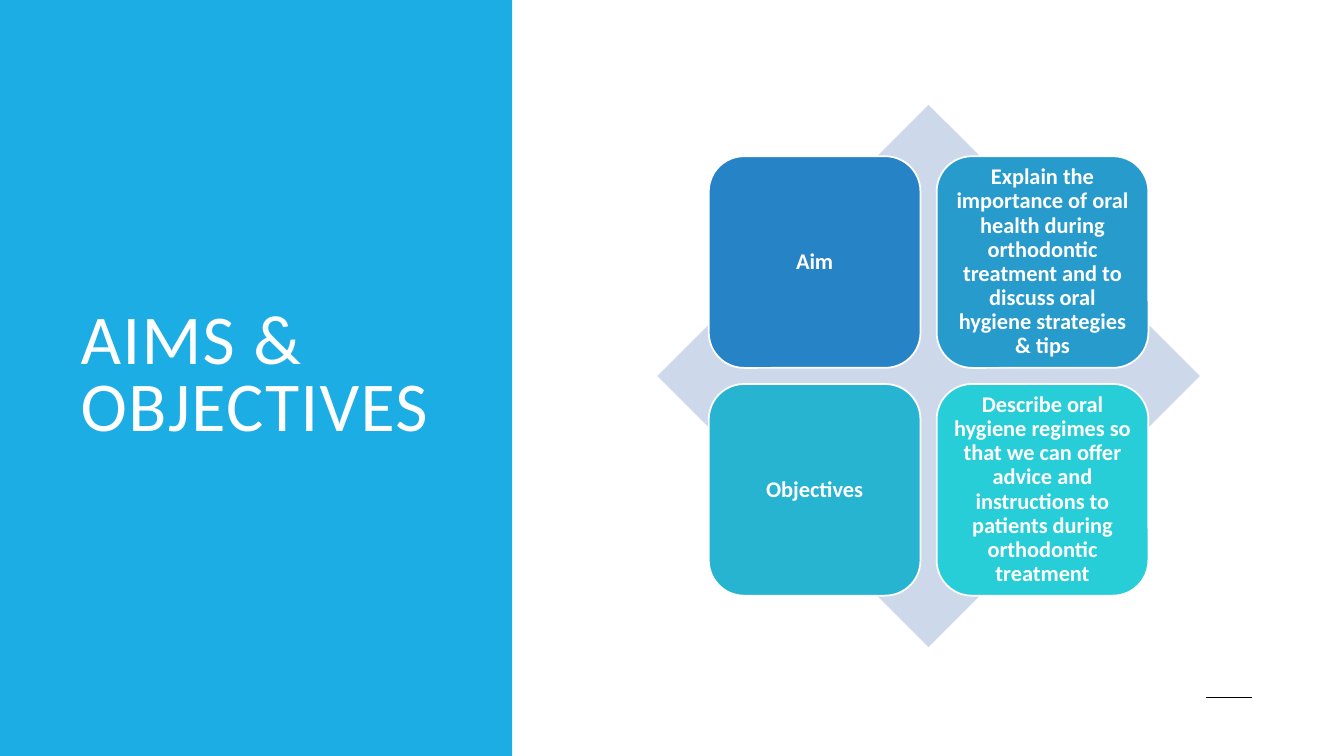
import pptx
import pptx.util
import pptx.dml.color
import pptx.enum.shapes
import pptx.enum.text
import pptx.oxml

Inches, Pt = pptx.util.Inches, pptx.util.Pt
SHAPE = pptx.enum.shapes.MSO_SHAPE
ALIGN = pptx.enum.text.PP_ALIGN
FONT = "Calibri"
WHITE = "FFFFFF"

CELLS = [
    ("Aim", "2683C6"),
    ("Explain the importance of oral health during orthodontic treatment "
     "and to discuss oral hygiene strategies & tips", "269BCC"),
    ("Objectives", "27B4D1"),
    ("Describe oral hygiene regimes so that we can offer advice and "
     "instructions to patients during orthodontic treatment", "27CED7"),
]


def rgb(color):
    return pptx.dml.color.RGBColor.from_string(color)


def add_block(s, kind, x, y, w, h, fill, line=None):
    sp = s.shapes.add_shape(kind, Inches(x), Inches(y), Inches(w), Inches(h))
    sp.shadow.inherit = False
    sp.fill.solid()
    sp.fill.fore_color.rgb = rgb(fill)
    if line:
        sp.line.color.rgb = rgb(line)
        sp.line.width = Pt(1.25)
    else:
        sp.line.fill.background()
    return sp


def write(sp, text, size, align, spacing, inset, bold=False):
    tf = sp.text_frame
    tf.text = text
    tf.word_wrap = True
    tf.auto_size = pptx.enum.text.MSO_AUTO_SIZE.NONE
    tf.vertical_anchor = pptx.enum.text.MSO_ANCHOR.MIDDLE
    tf.margin_left = tf.margin_right = Inches(inset)
    tf.margin_top = tf.margin_bottom = Inches(inset)
    p = tf.paragraphs[0]
    p.alignment = align
    p.line_spacing = spacing
    r = p.runs[0]
    r.font.name = FONT
    r.font.size = Pt(size)
    r.font.bold = bold
    r.font.color.rgb = rgb(WHITE)
    return r


def title_panel(s, x, y, w, h):
    panel = add_block(s, SHAPE.RECTANGLE, x, y, w, h, "1CADE4")
    title = s.shapes.title
    title.left, title.top = Inches(x + 0.7), Inches(y + 0.7)
    title.width, title.height = Inches(w - 1.34), Inches(h - 1.41)
    r = write(title, "AIMS & OBJECTIVES", 50, ALIGN.LEFT, 0.8, 0.1)
    # Letter spacing of 1 pt, and the title in front of the panel
    r._r.get_or_add_rPr().set("spc", "100")
    panel.element.addnext(title.element)


def matrix(s, x, y, size):
    add_block(s, SHAPE.DIAMOND, x, y, size, size, "CDD9EA")
    # Two by two cells, centred on the diamond
    cell, pitch = 2.1, 2.26
    margin = (size - cell - pitch) / 2
    for i, (text, fill) in enumerate(CELLS):
        row, col = divmod(i, 2)
        sp = add_block(s, SHAPE.ROUNDED_RECTANGLE, x + margin + col * pitch,
                       y + margin + row * pitch, cell, cell, fill, WHITE)
        write(sp, text, 16, ALIGN.CENTER, 0.9, 0.07, bold=True)


def footer_rule(s, x, y, w):
    line = s.shapes.add_connector(pptx.enum.shapes.MSO_CONNECTOR.STRAIGHT,
                                  Inches(x), Inches(y), Inches(x + w), Inches(y))
    line.line.color.rgb = rgb("000000")
    line.line.width = Pt(1.25)
    line.element.spPr.append(pptx.oxml.parse_xml(
        '<a:effectLst xmlns:a="http://schemas.openxmlformats.org/drawingml/2006/main"/>'))


def main():
    prs = pptx.Presentation()
    prs.slide_width, prs.slide_height = Inches(13.33), Inches(7.5)
    s = prs.slides.add_slide(prs.slide_layouts[5])
    footer_rule(s, 11.96, 6.92, 0.46)
    title_panel(s, 0, 0, 5.08, 7.5)
    matrix(s, 6.52, 1.04, 5.38)
    prs.save("out.pptx")


if __name__ == "__main__":
    main()
